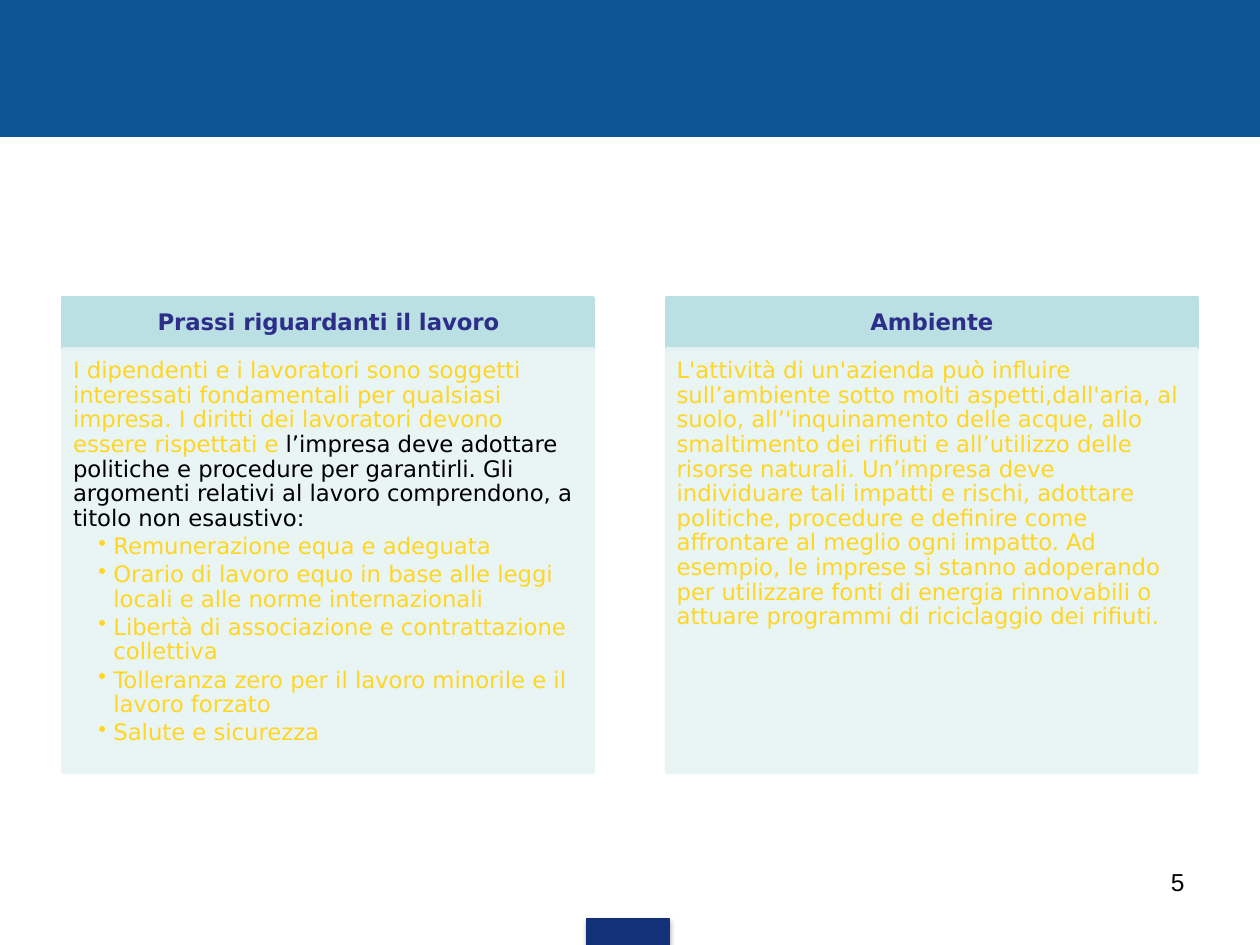
from lxml.etree import SubElement
from pptx import Presentation
from pptx.dml.color import RGBColor
from pptx.enum.shapes import MSO_SHAPE
from pptx.enum.text import MSO_ANCHOR, PP_ALIGN
from pptx.oxml.ns import qn
from pptx.util import Inches, Pt

YELLOW, BLACK, INDIGO = "FFD624", "000000", "2D2D8A"
BODY_FONT = "DejaVu Sans"

CARDS = [
    {
        "heading": "Prassi riguardanti il lavoro",
        "intro": [
            ("I dipendenti e i lavoratori sono soggetti interessati fondamentali per qualsiasi "
             "impresa. I diritti dei lavoratori devono essere rispettati e ", YELLOW),
            ("l’impresa deve adottare politiche e procedure per garantirli. Gli argomenti "
             "relativi al lavoro comprendono, a titolo non esaustivo:", BLACK),
        ],
        "topics": [
            "Remunerazione equa e adeguata",
            "Orario di lavoro equo in base alle leggi locali e alle norme internazionali",
            "Libertà di associazione e contrattazione collettiva",
            "Tolleranza zero per il lavoro minorile e il lavoro forzato",
            "Salute e sicurezza",
        ],
    },
    {
        "heading": "Ambiente",
        "intro": [
            ("L'attività di un'azienda può influire sull’ambiente sotto molti aspetti,dall'aria, "
             "al suolo, all’'inquinamento delle acque, allo smaltimento dei rifiuti e "
             "all’utilizzo delle risorse naturali. Un’impresa deve individuare tali impatti e "
             "rischi, adottare politiche, procedure e definire come affrontare al meglio ogni "
             "impatto. Ad esempio, le imprese si stanno adoperando per utilizzare fonti di "
             "energia rinnovabili o attuare programmi di riciclaggio dei rifiuti.", YELLOW),
        ],
        "topics": [],
    },
]
PAGE_NUMBER = "5"

SLIDE_W, SLIDE_H = 10, 7.5
MARGIN, CARD_W, CARD_TOP = 0.5, 4.21, 2.36
HEADING_H, BODY_H = 0.41, 3.36
CARD_STEP = SLIDE_W - 2 * MARGIN - CARD_W


def color(value):
    return RGBColor.from_string(value)


def add_box(slide, left, top, width, height, fill, line_width=0.75, opacity=100):
    box = slide.shapes.add_shape(MSO_SHAPE.RECTANGLE, Inches(left), Inches(top),
                                 Inches(width), Inches(height))
    box.shadow.inherit = False
    box.fill.solid()
    box.fill.fore_color.rgb = color(fill)
    box.line.color.rgb = color(fill)
    box.line.width = Pt(line_width)
    if opacity < 100:
        for shade in box._element.spPr.iter(qn("a:srgbClr")):
            SubElement(shade, qn("a:alpha"), val=str(opacity * 1000))
    return box


def add_shadow(box, blur, distance, opacity):
    effects = box._element.spPr.find(qn("a:effectLst"))
    shadow = SubElement(effects, qn("a:outerShdw"), blurRad=str(Pt(blur)),
                        dist=str(Pt(distance)), dir="5400000", rotWithShape="0")
    shade = SubElement(shadow, qn("a:srgbClr"), val=BLACK)
    SubElement(shade, qn("a:alpha"), val=str(opacity * 1000))


def set_frame(frame, insets, anchor=MSO_ANCHOR.TOP):
    frame.word_wrap = True
    frame.vertical_anchor = anchor
    (frame.margin_left, frame.margin_top,
     frame.margin_right, frame.margin_bottom) = map(Inches, insets)


def write(paragraph, runs, size=13, font=BODY_FONT, bold=False, align=PP_ALIGN.LEFT,
          line_spacing=0.9, space_after=2, bullet=False):
    paragraph.alignment = align
    paragraph.line_spacing = line_spacing
    paragraph.space_after = Pt(space_after)
    if bullet:
        properties = paragraph._p.get_or_add_pPr()
        properties.set("marL", str(Inches(0.32)))
        properties.set("indent", str(Inches(-0.12)))
        SubElement(properties, qn("a:buChar"), char="•")
    for text, shade in runs:
        run = paragraph.add_run()
        run.text = text
        run.font.size = Pt(size)
        run.font.name = font
        run.font.bold = bold
        run.font.color.rgb = color(shade)


def add_card(slide, left, card):
    heading = add_box(slide, left, CARD_TOP, CARD_W, HEADING_H, "BBE0E3", 2).text_frame
    set_frame(heading, (0.1, 0.06, 0.1, 0.06), MSO_ANCHOR.MIDDLE)
    write(heading.paragraphs[0], [(card["heading"], INDIGO)], bold=True,
          align=PP_ALIGN.CENTER, space_after=0)

    body = add_box(slide, left, CARD_TOP + HEADING_H, CARD_W, BODY_H,
                   "E7F3F4", 2, opacity=90).text_frame
    set_frame(body, (0.08, 0.08, 0.1, 0.11))
    write(body.paragraphs[0], card["intro"])
    for topic in card["topics"]:
        write(body.add_paragraph(), [(topic, YELLOW)], bullet=True)


def main():
    presentation = Presentation()
    presentation.slide_width = Inches(SLIDE_W)
    presentation.slide_height = Inches(SLIDE_H)
    slide = presentation.slides.add_slide(presentation.slide_layouts[6])

    add_box(slide, 0, 0, SLIDE_W, 1.08, "0F5494")
    footer_tab = add_box(slide, 4.66, 7.29, 0.65, 0.21, "133176")
    add_shadow(footer_tab, blur=3.1, distance=1.8, opacity=35)

    for index, card in enumerate(CARDS):
        add_card(slide, MARGIN + index * CARD_STEP, card)

    number = slide.shapes.add_textbox(Inches(7.17), Inches(6.83), Inches(2.33), Inches(0.52))
    set_frame(number.text_frame, (0.1, 0.05, 0.1, 0.05))
    write(number.text_frame.paragraphs[0], [(PAGE_NUMBER, BLACK)], size=14, font="Arial",
          align=PP_ALIGN.RIGHT, line_spacing=1.0, space_after=0)

    presentation.save("out.pptx")


if __name__ == "__main__":
    main()
